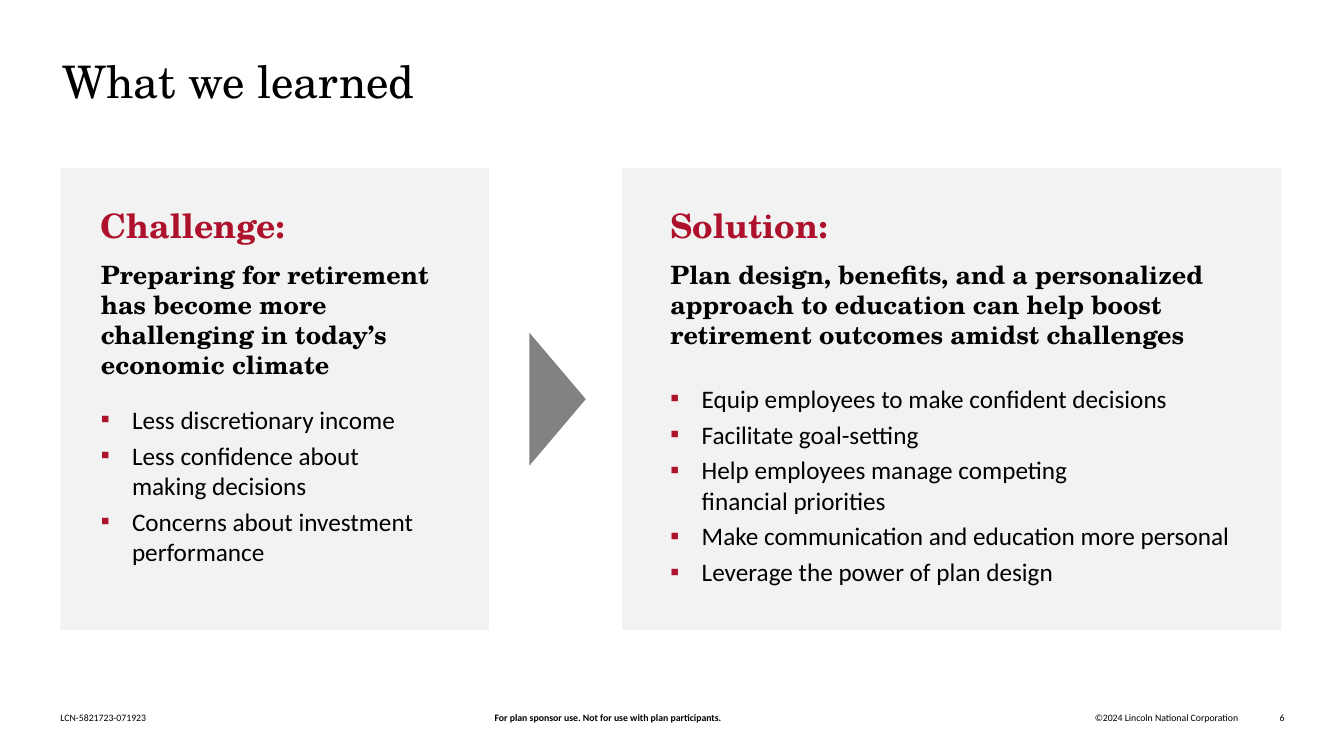
from lxml import etree
from pptx import Presentation
from pptx import util as u
from pptx.dml.color import RGBColor
from pptx.enum import shapes, text
from pptx.oxml import ns

PX = 9144
SERIF, SANS = "TeX Gyre Schola", "Calibri"
BLACK = RGBColor(0x00, 0x00, 0x00)
RED = RGBColor(0xAD, 0x11, 0x2B)
PANEL_GREY = RGBColor(0xF2, 0xF2, 0xF2)
ARROW_GREY = RGBColor(0x82, 0x82, 0x82)
LEFT, CENTER, RIGHT = text.PP_ALIGN.LEFT, text.PP_ALIGN.CENTER, text.PP_ALIGN.RIGHT
BULLET_INDENT = 31

PANELS = [
    ((60, 167, 425, 458), 40, 234, "Challenge:",
     "Preparing for retirement has become more challenging in today’s economic climate",
     ["Less discretionary income",
      "Less confidence about \nmaking decisions",
      "Concerns about investment performance"]),
    ((617, 167, 654, 458), 48, 213, "Solution:",
     "Plan design, benefits, and a personalized approach to education "
     "can help boost retirement outcomes amidst challenges",
     ["Equip employees to make confident decisions",
      "Facilitate goal-setting",
      "Help employees manage competing \nfinancial priorities",
      "Make communication and education more personal",
      "Leverage the power of plan design"]),
]


def to_emu(box):
    """Turn a box in px into EMU lengths."""
    return [u.Emu(length * PX) for length in box]


def add_shape(slide, kind, box, color):
    """Add a flat filled shape without an outline."""
    shape = slide.shapes.add_shape(kind, *to_emu(box))
    shape.shadow.inherit = False
    shape.fill.solid()
    shape.fill.fore_color.rgb = color
    shape.line.fill.background()
    return shape


def add_bullet(paragraph):
    """Give a paragraph a red square bullet with a hanging indent."""
    properties = paragraph._p.get_or_add_pPr()
    properties.set("marL", str(BULLET_INDENT * PX))
    properties.set("indent", str(-BULLET_INDENT * PX))
    color = etree.SubElement(properties, ns.qn("a:buClr"))
    etree.SubElement(color, ns.qn("a:srgbClr")).set("val", str(RED))
    etree.SubElement(properties, ns.qn("a:buFont")).set("typeface", SANS)
    etree.SubElement(properties, ns.qn("a:buChar")).set("char", "▪")
    paragraph.space_after = u.Pt(4)


def add_text(slide, box, lines, size, font, color=BLACK, bold=False,
             align=LEFT, anchor=text.MSO_ANCHOR.TOP, bulleted=False):
    """Add a text box without margins, one paragraph per line."""
    frame = slide.shapes.add_textbox(*to_emu(box)).text_frame
    frame.word_wrap = True
    frame.vertical_anchor = anchor
    frame.margin_left = frame.margin_right = frame.margin_top = frame.margin_bottom = 0
    for index, line in enumerate(lines):
        paragraph = frame.add_paragraph() if index else frame.paragraphs[0]
        paragraph.alignment = align
        if bulleted:
            add_bullet(paragraph)
        for part_index, part in enumerate(line.split("\n")):
            if part_index:
                paragraph.add_line_break()
            run = paragraph.add_run()
            run.text = part
            run.font.name = font
            run.font.size = u.Pt(size)
            run.font.bold = bold
            run.font.color.rgb = color


def add_panel(slide, box, inset, bullets_top, heading, lead, bullets):
    """Add a grey panel with its heading, lead and bullets."""
    left, top, width, height = box
    text_left = left + inset
    add_shape(slide, shapes.MSO_SHAPE.RECTANGLE, box, PANEL_GREY)
    add_text(slide, (text_left, top + 36, 367, 40), [heading], 24, SERIF, RED, True)
    add_text(slide, (text_left, top + 90, width - inset - 43, 121), [lead], 18, SERIF, bold=True)
    add_text(slide, (text_left, top + bullets_top, width - inset - 31, height - bullets_top - 40),
             bullets, 18, SANS, bulleted=True)


def add_footer(slide, box):
    """Add the code, notice, copyright and page number along one row."""
    left, top, width, height = box
    parts = [
        (0, 187, "LCN-5821723-071923", LEFT, False),
        (163, 760, "For plan sponsor use. Not for use with plan participants.", CENTER, True),
        (923, 245, "©2024 Lincoln National Corporation", RIGHT, False),
        (width - 33, 33, "6", RIGHT, False),
    ]
    for offset, part_width, words, align, bold in parts:
        add_text(slide, (left + offset, top, part_width, height), [words], 7, SANS,
                 bold=bold, align=align, anchor=text.MSO_ANCHOR.BOTTOM)


def main():
    """Build the slide and save it."""
    presentation = Presentation()
    presentation.slide_width, presentation.slide_height = to_emu((1333, 750))
    slide = presentation.slides.add_slide(presentation.slide_layouts[6])
    add_text(slide, (62, 53, 1088, 57), ["What we learned"], 32, SERIF)
    for panel in PANELS:
        add_panel(slide, *panel)
    arrow = add_shape(slide, shapes.MSO_SHAPE.ISOSCELES_TRIANGLE, (487, 368, 132, 56), ARROW_GREY)
    arrow.rotation = 90
    add_footer(slide, (60, 706, 1214, 12))
    presentation.save("out.pptx")


if __name__ == "__main__":
    main()
